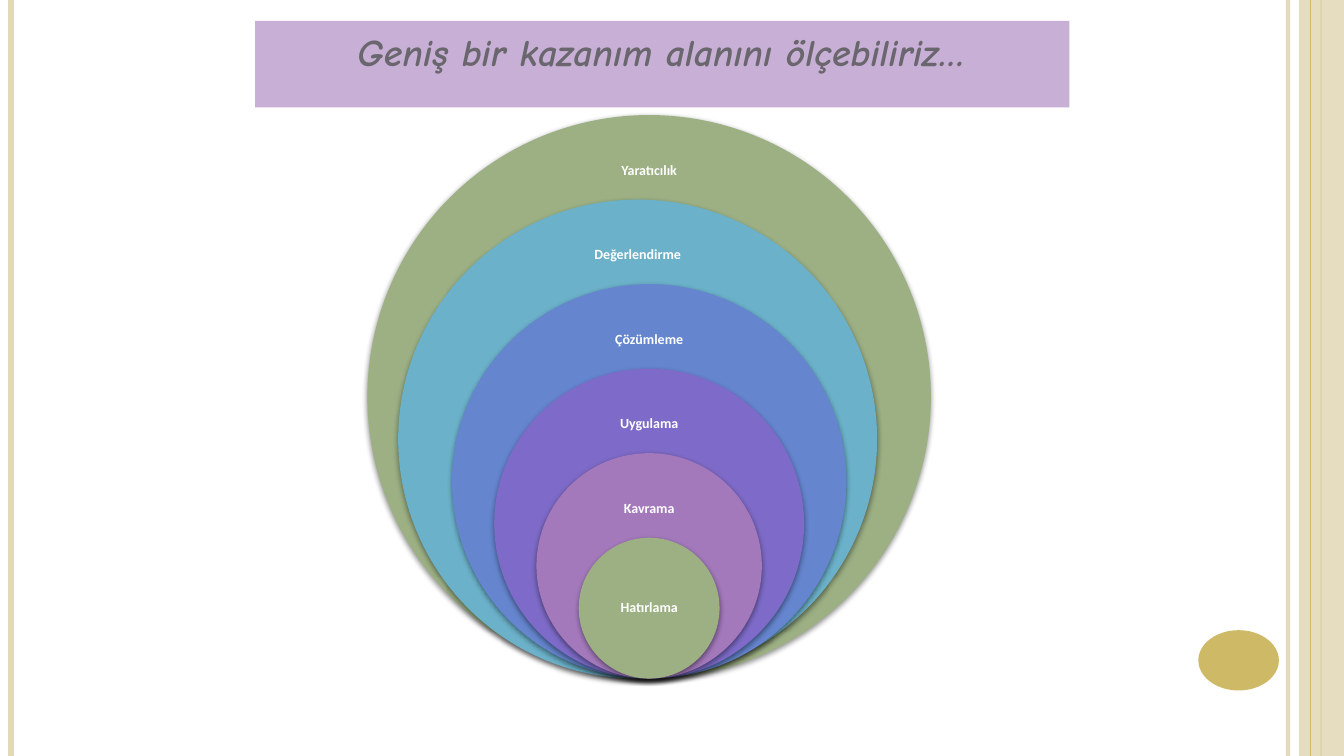
from lxml import etree
from pptx import Presentation
from pptx.dml.color import RGBColor
from pptx.enum.shapes import MSO_CONNECTOR, MSO_SHAPE
from pptx.enum.text import MSO_ANCHOR, PP_ALIGN
from pptx.oxml import parse_xml
from pptx.oxml.ns import qn
from pptx.util import Cm, Pt

RECTANGLE, OVAL = MSO_SHAPE.RECTANGLE, MSO_SHAPE.OVAL
STRAIGHT = MSO_CONNECTOR.STRAIGHT
CENTER, TOP, MIDDLE = PP_ALIGN.CENTER, MSO_ANCHOR.TOP, MSO_ANCHOR.MIDDLE
WIDTH, HEIGHT = 33.87, 19.05
SHADOW = (
    '<a:effectLst xmlns:a="http://schemas.openxmlformats.org/drawingml/2006/main">'
    '<a:outerShdw blurRad="50800" dist="20320" dir="5400000" rotWithShape="0">'
    '<a:srgbClr val="000000"><a:alpha val="42000"/></a:srgbClr>'
    '</a:outerShdw></a:effectLst>'
)


def paint(fill, color, opacity=100):
    """Set a solid colour, with opacity in percent, on a shape's or line's fill."""
    fill.solid()
    fill.fore_color.rgb = RGBColor.from_string(color)
    if opacity < 100:
        color_element = fill._xPr.find(qn("a:solidFill"))[0]
        etree.SubElement(color_element, qn("a:alpha"), val=str(opacity * 1000))


def write(shape, text, size, font_name, color, anchor, inset):
    """Put one centred bold line of text in a shape."""
    frame = shape.text_frame
    frame.word_wrap = True
    frame.vertical_anchor = anchor
    frame.margin_left = frame.margin_right = Cm(inset)
    frame.margin_top = frame.margin_bottom = Cm(inset)
    frame.text = text
    paragraph = frame.paragraphs[0]
    paragraph.alignment = CENTER
    paragraph.line_spacing = 0.9
    font = paragraph.runs[0].font
    font.name, font.size, font.bold = font_name, Pt(size), True
    paint(font.fill, color)


presentation = Presentation()
presentation.slide_width = Cm(WIDTH)
presentation.slide_height = Cm(HEIGHT)
slide = presentation.slides.add_slide(presentation.slide_layouts[6])
shapes = slide.shapes

# Side decoration: the band lies over the first three stripes
stripes = [
    (32.46, "E3D9B8", 3, 93),
    (0.28, "E3D9B8", 4.5, 100),
    (33.3, "CEB966", 1.5, 100),
    (33.02, "CEB966", 0.75, 100),
]
for index, (x, color, weight, opacity) in enumerate(stripes):
    if index == 3:
        band = shapes.add_shape(RECTANGLE, Cm(32.74), 0, Cm(WIDTH - 32.74), Cm(HEIGHT))
        band.shadow.inherit = False
        paint(band.fill, "E3D9B8", 87)
        band.line.fill.background()
    stripe = shapes.add_connector(STRAIGHT, Cm(x), 0, Cm(x), Cm(HEIGHT))
    stripe.line.width = Pt(weight)
    paint(stripe.line.fill, color, opacity)
    etree.SubElement(stripe._element.spPr, qn("a:effectLst"))

badge = shapes.add_shape(OVAL, Cm(30.2), Cm(15.88), Cm(2.03), Cm(1.52))
badge.shadow.inherit = False
paint(badge.fill, "CEB966")
badge.line.fill.background()

# Nested circles, largest first, all resting on the same bottom point
BOTTOM, LARGEST, STEP = 17.1, 14.2, 2.13
levels = [
    ("Yaratıcılık", "9CB084", 16.36, 5.33),
    ("Değerlendirme", "6BB1C9", 16.07, 5.2),
    ("Çözümleme", "6585CF", 16.36, 5.15),
    ("Uygulama", "7E6BC9", 16.36, 4.2),
    ("Kavrama", "A379BB", 16.36, 3.7),
    ("Hatırlama", "9CB084", 16.36, 2.5),
]
for index, (name, color, center, label_width) in enumerate(levels):
    diameter = LARGEST - index * STEP
    top = BOTTOM - diameter
    circle = shapes.add_shape(
        OVAL, Cm(center - diameter / 2), Cm(top), Cm(diameter), Cm(diameter))
    paint(circle.fill, color)
    circle.line.fill.background()
    circle._element.spPr.append(parse_xml(SHADOW))

    innermost = index == len(levels) - 1
    label_height = diameter / 2 if innermost else 1.4
    label_top = top + (diameter / 4 if innermost else 0.7)
    label = shapes.add_textbox(
        Cm(center - label_width / 2), Cm(label_top), Cm(label_width), Cm(label_height))
    write(label, name, 10, "Calibri", "FFFFFF", MIDDLE, 0.2)

title = shapes.add_shape(RECTANGLE, Cm(6.43), Cm(0.53), Cm(20.52), Cm(2.18))
title.shadow.inherit = False
paint(title.fill, "C8AFD6")
title.line.fill.background()
write(title, "Geniş bir kazanım alanını ölçebiliriz…", 27, "Comic Neue", "69676D", TOP, 0.33)
title_paragraph = title.text_frame.paragraphs[0]
title_paragraph.space_before = Pt(13.3)
title_paragraph.runs[0].font.italic = True

presentation.save("out.pptx")
